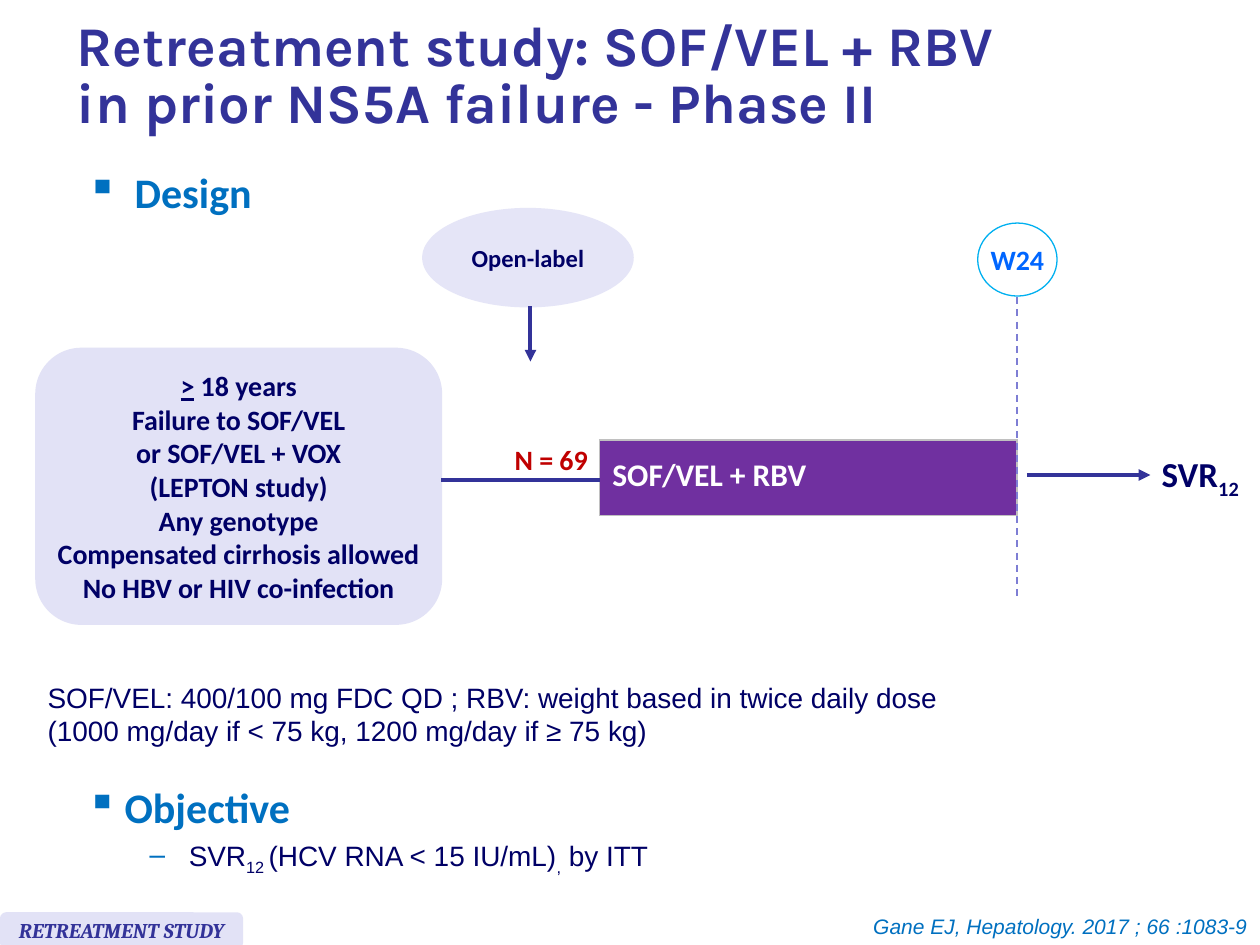
from lxml.etree import SubElement
from pptx import Presentation
from pptx.dml.color import RGBColor
from pptx.enum.dml import MSO_LINE
from pptx.enum.shapes import MSO_CONNECTOR as Connector, MSO_SHAPE as Preset
from pptx.enum.text import MSO_ANCHOR as Anchor, PP_ALIGN as Align
from pptx.oxml.ns import qn
from pptx.util import Inches, Pt

# The slide is a grid of 100 columns and 75 rows
WIDTH, HEIGHT = Inches(10), Inches(7.5)
COLUMNS, ROWS = 100, 75

NAVY, INDIGO, BLUE, LAVENDER = "000066", "333399", "0070C0", "E2E2F6"
WHITE, RED, PURPLE, SILVER = "FFFFFF", "C00000", "7030A0", "C0C0C0"
ARM_AXIS = 37.9     # row through the middle of the treatment arm
WEEK_24 = 80.7      # column where treatment ends


def color(hex_string):
    return RGBColor.from_string(hex_string)


def column(count):
    return round(WIDTH * count / COLUMNS)


def row(count):
    return round(HEIGHT * count / ROWS)


def place(left, top, width, height):
    return column(left), row(top), column(width), row(height)


def add_bullet(paragraph, character, indent, hanging):
    properties = paragraph._p.get_or_add_pPr()
    properties.set("marL", str(Inches(indent)))
    properties.set("indent", str(-Inches(hanging)))
    bullet_color = SubElement(properties, qn("a:buClr"))
    SubElement(bullet_color, qn("a:srgbClr")).set("val", BLUE)
    SubElement(properties, qn("a:buChar")).set("char", character)


def write(paragraph, text, size=16, font="Calibri", fill=NAVY, bold=False,
          italic=False, underline=False, subscript=False, align=None,
          line_spacing=None):
    """Append text to a paragraph; a newline becomes a line break."""
    if align is not None:
        paragraph.alignment = align
    if line_spacing:
        paragraph.line_spacing = line_spacing
    for number, line in enumerate(text.split("\n")):
        if number:
            paragraph.add_line_break()
        run = paragraph.add_run()
        run.text = line
        run.font.size, run.font.name = Pt(size), font
        run.font.bold, run.font.italic = bold, italic
        run.font.underline = underline
        run.font.color.rgb = color(fill)
        if subscript:
            run._r.get_or_add_rPr().set("baseline", "-25000")


def add_text_box(slide, box, wrap=True):
    frame = slide.shapes.add_textbox(*place(*box)).text_frame
    frame.word_wrap = wrap
    return frame


def add_panel(slide, preset, box, fill, outline=None, wrap=False):
    shape = slide.shapes.add_shape(preset, *place(*box))
    shape.shadow.inherit = False
    shape.fill.solid()
    shape.fill.fore_color.rgb = color(fill)
    if outline:
        shape.line.color.rgb = color(outline)
        shape.line.width = Pt(0.75)
    else:
        shape.line.fill.background()
    frame = shape.text_frame
    frame.word_wrap = wrap
    frame.vertical_anchor = Anchor.MIDDLE
    return frame


def add_line(slide, start, end, fill=INDIGO, width=2.25, arrow=False, dash=False):
    line = slide.shapes.add_connector(
        Connector.STRAIGHT, column(start[0]), row(start[1]),
        column(end[0]), row(end[1]))
    line.line.color.rgb = color(fill)
    line.line.width = Pt(width)
    if dash:
        line.line.dash_style = MSO_LINE.DASH
    if arrow:
        SubElement(line.line._get_or_add_ln(), qn("a:tailEnd")).set("type", "triangle")
    SubElement(line._element.spPr, qn("a:effectLst"))


def add_arm(slide, box, text):
    """Treatment arm: a table of one bordered cell."""
    table = slide.shapes.add_table(1, 1, *place(*box)).table
    cell = table.cell(0, 0)
    cell.vertical_anchor = Anchor.MIDDLE
    properties = cell._tc.get_or_add_tcPr()
    for side in ("lnL", "lnR", "lnT", "lnB"):
        border = SubElement(properties, qn(f"a:{side}"), w=str(Pt(1)))
        border_fill = SubElement(border, qn("a:solidFill"))
        SubElement(border_fill, qn("a:srgbClr")).set("val", SILVER)
    cell.fill.solid()
    cell.fill.fore_color.rgb = color(PURPLE)
    write(cell.text_frame.paragraphs[0], text, size=18, fill=WHITE, bold=True,
          line_spacing=0.8)


def add_title(slide, text):
    title = slide.shapes.title
    title.left, title.top, title.width, title.height = place(5.1, 0.8, 93.7, 10.7)
    title.text_frame.vertical_anchor = Anchor.MIDDLE
    write(title.text_frame.paragraphs[0], text, size=32, font="Karla", fill=INDIGO,
          bold=True, align=Align.LEFT, line_spacing=0.85)


def add_heading(slide, box, text, indent):
    frame = add_text_box(slide, box)
    add_bullet(frame.paragraphs[0], "▪", indent, indent)
    write(frame.paragraphs[0], text, size=24, fill=BLUE, bold=True)
    return frame


def add_population(slide):
    frame = add_panel(slide, Preset.ROUNDED_RECTANGLE, (2.8, 27.6, 32.3, 22),
                      LAVENDER, wrap=True)
    frame.margin_left = frame.margin_right = Inches(0.04)
    first = frame.paragraphs[0]
    write(first, ">", bold=True, underline=True, align=Align.CENTER)
    write(first, " 18 years\nFailure to SOF/VEL", bold=True)
    for criterion in ("or SOF/VEL + VOX", "(LEPTON study)", "Any genotype",
                      "Compensated cirrhosis allowed", "No HBV or HIV co-infection"):
        write(frame.add_paragraph(), criterion, bold=True, align=Align.CENTER)


def add_design(slide):
    add_heading(slide, (5.9, 12.7, 19.8, 6.3), "Design", 0.38)

    # Population, treatment arm and its size
    add_arm(slide, (47.6, 34.9, WEEK_24 - 47.6, 6), "SOF/VEL + RBV")
    size_label = add_text_box(slide, (39.8, 34.6, 7.9, 3.7), wrap=False)
    write(size_label.paragraphs[0], "N = 69", fill=RED, bold=True, align=Align.CENTER)
    add_population(slide)
    add_line(slide, (35, 38.1), (47.6, 38.1))

    # Open-label marker
    marker = add_panel(slide, Preset.OVAL, (33.5, 16.5, 16.8, 7.9), "E5E5F7")
    write(marker.paragraphs[0], "Open-label", size=14, bold=True, align=Align.CENTER)
    add_line(slide, (42.1, 24.3), (42.1, 28.7), arrow=True)

    # End of treatment and outcome
    add_line(slide, (WEEK_24, 23.6), (WEEK_24, 47.6), "7E7ED4", 1, dash=True)
    week = add_panel(slide, Preset.OVAL, (77.6, 17.7, 6.3, 5.8), WHITE, "00B0F0")
    write(week.paragraphs[0], "W24", fill="0066FF", bold=True, align=Align.CENTER)
    add_line(slide, (81.5, ARM_AXIS - 0.2), (91.3, ARM_AXIS - 0.2), arrow=True)
    outcome = add_text_box(slide, (91.2, 35.4, 8.5, 4.4), wrap=False).paragraphs[0]
    write(outcome, "SVR", size=20, bold=True)
    write(outcome, "12", size=20, bold=True, subscript=True)

    # Dosing
    dosing = add_text_box(slide, (2.8, 53.5, 89, 6.4))
    write(dosing.paragraphs[0],
          "SOF/VEL: 400/100 mg FDC QD ; RBV: weight based in twice daily dose\n"
          "(1000 mg/day if < 75 kg, 1200 mg/day if ≥ 75 kg)", font="Arial")


def add_objective(slide):
    frame = add_heading(slide, (5.9, 61.5, 91.3, 9.1), "Objective", 0.3)
    endpoint = frame.add_paragraph()
    endpoint.level = 1
    add_bullet(endpoint, "–", 0.81, 0.31)
    endpoint.space_before = Pt(4)
    for text, subscript in (("SVR", False), ("12 ", True),
                            ("(HCV RNA < 15 IU/mL)", False), (",", True),
                            (" by ITT", False)):
        write(endpoint, text, font="Arial", subscript=subscript)


def add_footer(slide):
    tag = add_panel(slide, Preset.ROUNDED_RECTANGLE, (0, 72.4, 19.3, 2.9), LAVENDER)
    write(tag.paragraphs[0], "RETREATMENT STUDY", size=12, font="Cambria",
          fill=INDIGO, bold=True, italic=True, align=Align.CENTER)
    citation = add_text_box(slide, (68.1, 72, 31.9, 3), wrap=False)
    write(citation.paragraphs[0], "Gane EJ, Hepatology. 2017 ; 66 :1083-9", size=12,
          font="Arial", fill=BLUE, italic=True, align=Align.RIGHT)


def main():
    presentation = Presentation()
    presentation.slide_width, presentation.slide_height = WIDTH, HEIGHT
    slide = presentation.slides.add_slide(presentation.slide_layouts[5])
    add_title(slide, "Retreatment study: SOF/VEL + RBV\n"
                     "in prior NS5A failure - Phase II")
    add_design(slide)
    add_objective(slide)
    add_footer(slide)
    presentation.save("out.pptx")


if __name__ == "__main__":
    main()
